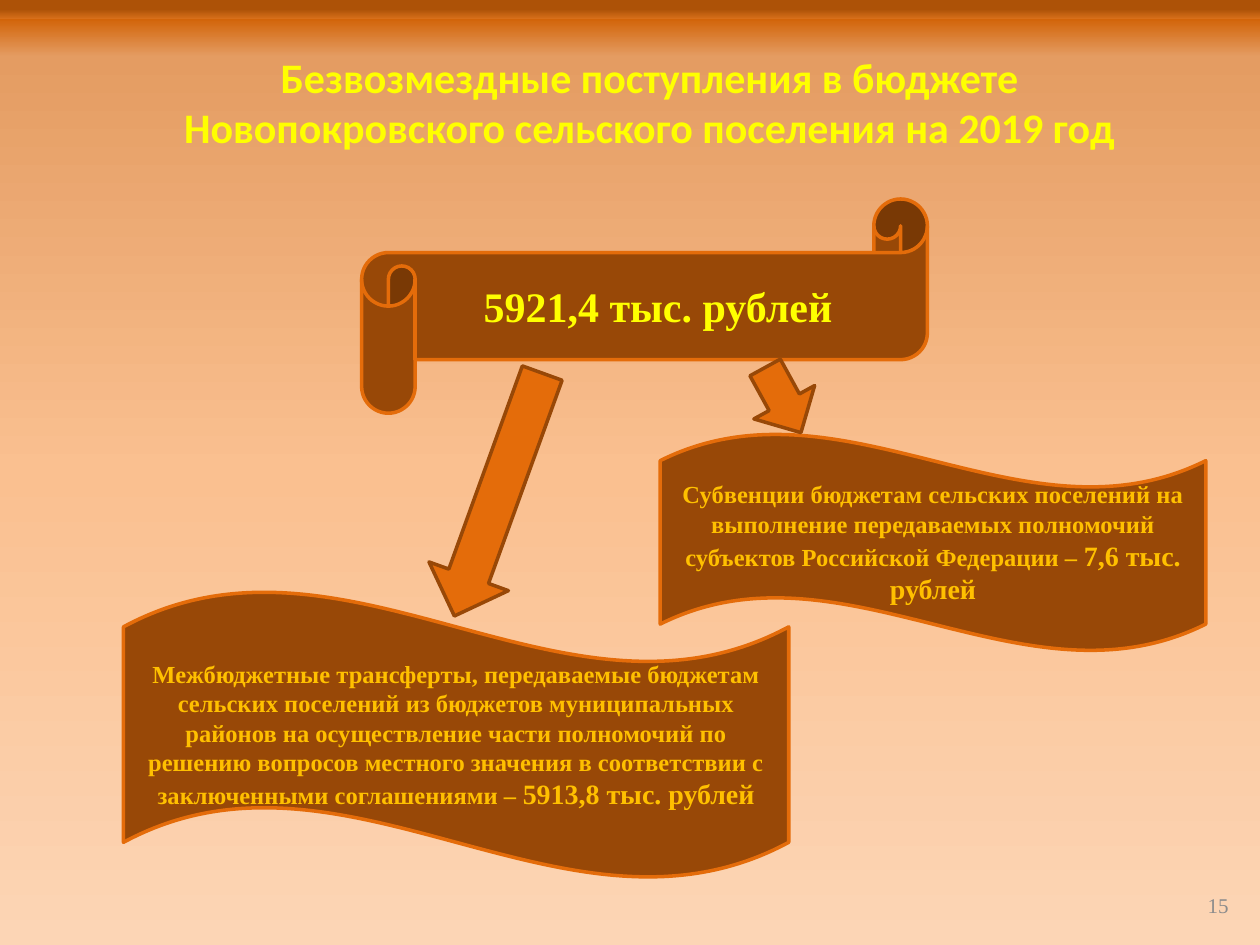
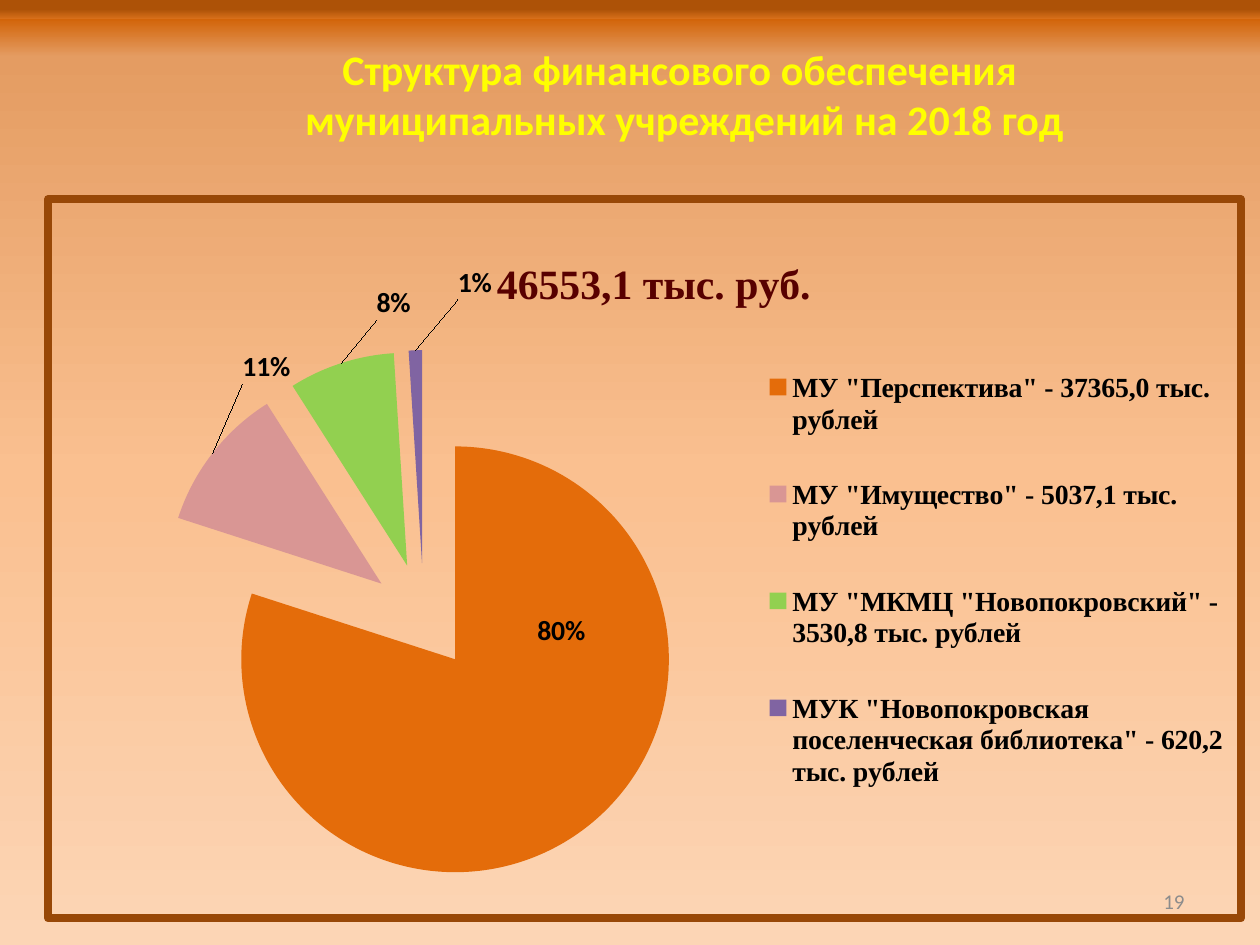
import copy
import pptx
import pptx.util
import pptx.chart.data
import pptx.dml.color
import pptx.enum.chart
import pptx.enum.shapes
import pptx.enum.text
import pptx.oxml
import pptx.oxml.ns

COLUMNS, ROWS = 100, 75
SERIF, SANS = "Times New Roman", "Calibri"
YELLOW, GOLD, BROWN, ORANGE, GREY = "FFFF00", "FFC000", "984807", "E46C0A", "8C8C8C"
BACKDROP = [(1, "AD5207"), (2, "D76F1A"), (2, "D26409"),
            (6, "E49C62"), (50, "FAC090"), (100, "FCD5B5")]
SHAPES = pptx.enum.shapes.MSO_SHAPE
ALIGN = pptx.enum.text.PP_ALIGN
ANCHOR = pptx.enum.text.MSO_ANCHOR


def color(value):
    return pptx.dml.color.RGBColor.from_string(value)


def xml(tag, body="", attributes=""):
    namespaces = pptx.oxml.ns.nsdecls("a", "c")
    return pptx.oxml.parse_xml(f"<{tag} {namespaces} {attributes}>{body}</{tag}>")


def chart_layout(x, y, width=None, height=None, target="", edge=True):
    modes = '<c:xMode val="edge"/><c:yMode val="edge"/>' if edge else ""
    size = f'<c:w val="{width}"/><c:h val="{height}"/>' if width else ""
    return xml("c:layout", f'<c:manualLayout>{target}{modes}<c:x val="{x}"/>'
                           f'<c:y val="{y}"/>{size}</c:manualLayout>')


def set_layout(element, layout, before):
    for old in element.findall(pptx.oxml.ns.qn("c:layout")):
        element.remove(old)
    followers = [pptx.oxml.ns.qn(name) for name in before]
    following = [child for child in element if child.tag in followers]
    if following:
        following[0].addprevious(layout)
    else:
        element.append(layout)


class SlideStyle:
    def __init__(self, deck):
        self.deck = deck
        self.slide = None

    def page(self):
        self.slide = self.deck.slides.add_slide(self.deck.slide_layouts[6])
        fill = self.slide.background.fill
        fill.gradient()
        fill.gradient_angle = 270
        stops = fill._fill._gradFill.gsLst
        for stop in list(stops):
            stops.remove(stop)
        for share, value in BACKDROP:
            stops.append(xml("a:gs", f'<a:srgbClr val="{value}"/>', f'pos="{share * 1000}"'))

    def grid(self, column, row, width, height):
        across, down = self.deck.slide_width / COLUMNS, self.deck.slide_height / ROWS
        return [int(column * across), int(row * down), int(width * across), int(height * down)]

    def font(self, font, size, name, value, bold=True):
        font.size = pptx.util.Pt(size)
        font.name = name
        font.bold = bold
        font.color.rgb = color(value)

    def text(self, frame, paragraphs, name, value, align=ALIGN.CENTER,
             anchor=ANCHOR.MIDDLE, bold=True):
        frame.word_wrap = True
        frame.vertical_anchor = anchor
        for index, runs in enumerate(paragraphs):
            para = frame.paragraphs[0] if index == 0 else frame.add_paragraph()
            para.alignment = align
            for words, size in runs:
                span = para.add_run()
                span.text = words
                self.font(span.font, size, name, value, bold)

    def title(self, place, lines, anchor=ANCHOR.MIDDLE):
        box = self.slide.shapes.add_textbox(*self.grid(*place))
        self.text(box.text_frame, [[(line, 24)] for line in lines], SANS, YELLOW, anchor=anchor)

    def number(self, column, row, digits, name):
        box = self.slide.shapes.add_textbox(*self.grid(column, row, 23.3, 4))
        self.text(box.text_frame, [[(digits, 12)]], name, GREY, ALIGN.RIGHT, bold=False)

    def figure(self, kind, place, fill, line):
        shape = self.slide.shapes.add_shape(kind, *self.grid(*place))
        shape.shadow.inherit = False
        shape.fill.solid()
        shape.fill.fore_color.rgb = color(fill)
        shape.line.color.rgb = color(line)
        shape.line.width = pptx.util.Pt(2)
        return shape

    def panel(self, kind, place, runs, value):
        shape = self.figure(kind, place, BROWN, ORANGE)
        self.text(shape.text_frame, [runs], SERIF, value)
        return shape

    def arrow(self, place, rotation):
        self.figure(SHAPES.DOWN_ARROW, place, ORANGE, BROWN).rotation = rotation

    def pie(self, place, total, slices):
        data = pptx.chart.data.CategoryChartData()
        data.categories = [name for name, *_ in slices]
        data.add_series(total, [share for _, share, *_ in slices])
        chart = self.slide.shapes.add_chart(
            pptx.enum.chart.XL_CHART_TYPE.PIE, *self.grid(*place), data).chart
        self.font(chart.font, 18, SANS, "000000", False)
        self.chart_title(chart, total)
        self.chart_legend(chart)
        plot = chart.plots[0]
        plot.vary_by_categories = True
        series = plot.series[0]
        for index, (_, _, value, _) in enumerate(slices):
            fill = series.points[index].format.fill
            fill.solid()
            fill.fore_color.rgb = color(value)
        first_point = series._element.find(pptx.oxml.ns.qn("c:dPt"))
        first_point.addprevious(xml("c:explosion", attributes='val="25"'))
        self.pie_labels(series, [shift for *_, shift in slices])
        body = chart._chartSpace.chart
        inner = '<c:layoutTarget val="inner"/>'
        set_layout(body.plotArea, chart_layout(0.09, 0.21, 0.45, 0.74, inner), ["c:pieChart"])
        body.addnext(xml(
            "c:spPr", f'<a:noFill/><a:ln w="{pptx.util.Pt(4.5)}"><a:solidFill>'
                      f'<a:srgbClr val="{BROWN}"/></a:solidFill><a:round/></a:ln>'))

    def chart_title(self, chart, words):
        chart.has_title = True
        span = chart.chart_title.text_frame.paragraphs[0].add_run()
        span.text = words
        self.font(span.font, 24, SERIF, "580000")
        set_layout(chart.chart_title._element, chart_layout(0.37, 0.07),
                   ["c:overlay", "c:spPr", "c:txPr"])

    def chart_legend(self, chart):
        chart.has_legend = True
        legend = chart.legend
        legend.position = pptx.enum.chart.XL_LEGEND_POSITION.RIGHT
        legend.include_in_layout = False
        self.font(legend.font, 16, SERIF, "000000")
        set_layout(legend._element, chart_layout(0.6, 0.18, 0.39, 0.7),
                   ["c:overlay", "c:spPr", "c:txPr"])

    def pie_labels(self, series, shifts):
        labels = series.data_labels
        labels.show_value = False
        labels.show_percentage = True
        labels.number_format = "0%"
        labels.number_format_is_linked = False
        labels.position = pptx.enum.chart.XL_LABEL_POSITION.OUTSIDE_END
        self.font(labels.font, 16, SANS, "000000")
        element = labels._element
        shared = [child for child in element
                  if child.tag != pptx.oxml.ns.qn("c:showLeaderLines")]
        for index, shift in enumerate(shifts):
            label = xml("c:dLbl", f'<c:idx val="{index}"/>')
            label.append(chart_layout(*shift, edge=False))
            label.extend([copy.deepcopy(child) for child in shared])
            element.insert(index, label)


def transfers(style):
    style.page()
    style.title((12.2, 3.6, 78.7, 9.1),
                ["Безвозмездные поступления в бюджете Новопокровского сельского поселения на 2019 год"],
                ANCHOR.TOP)
    scroll = style.panel(SHAPES.HORIZONTAL_SCROLL, (28.7, 15.8, 44.9, 17),
                         [("5921,4 тыс. рублей", 24)], YELLOW)
    scroll.adjustments[0] = 0.25
    style.panel(SHAPES.WAVE, (52.4, 34.4, 43.3, 17.3), [
        ("Субвенции бюджетам сельских поселений на выполнение передаваемых полномочий "
         "субъектов Российской Федерации – ", 14),
        ("7,6 тыс. рублей", 16)], GOLD)
    style.panel(SHAPES.WAVE, (9.8, 46.9, 52.8, 22.8), [
        ("Межбюджетные трансферты, передаваемые бюджетам сельских поселений из бюджетов "
         "муниципальных районов на осуществление части полномочий по решению вопросов "
         "местного значения в соответствии с заключенными соглашениями – ", 14),
        ("5913,8 тыс. рублей", 16)], GOLD)
    style.arrow((36.2, 29, 6.7, 20.5), 19.9)
    style.arrow((59.4, 28.8, 5.5, 5.9), 331.2)
    style.number(75.2, 69.8, "15", SERIF)


def institutions(style):
    style.page()
    style.number(71.7, 69.5, "19", SANS)
    style.title((20.1, 2.9, 67.7, 9.1),
                ["Структура финансового обеспечения", " муниципальных учреждений на 2018 год"])
    style.pie((3.5, 15.5, 95.3, 57.7), "46553,1 тыс. руб.", [
        ('МУ "Перспектива" - 37365,0 тыс. рублей', 80, ORANGE, (-0.04, -0.31)),
        ('МУ "Имущество" - 5037,1 тыс. рублей', 11, "D99694", (0.07, -0.09)),
        ('МУ "МКМЦ "Новопокровский" - 3530,8 тыс. рублей', 8, "92D050", (0.06, -0.05)),
        ('МУК "Новопокровская поселенческая библиотека" - 620,2 тыс. рублей', 1, "8064A2",
         (0.05, -0.06))])


def main():
    deck = pptx.Presentation()
    deck.slide_width = pptx.util.Inches(10)
    deck.slide_height = pptx.util.Inches(7.5)
    style = SlideStyle(deck)
    transfers(style)
    institutions(style)
    deck.save("out.pptx")


if __name__ == "__main__":
    main()
